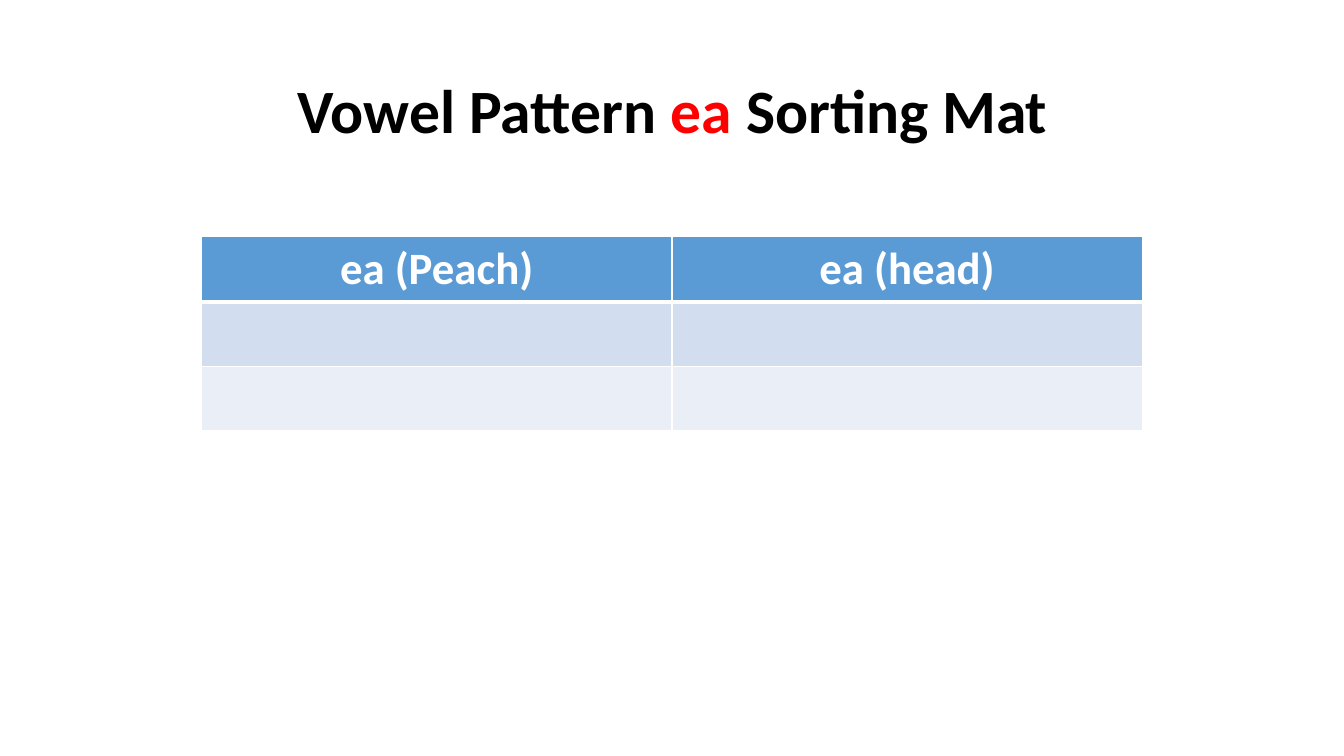
from lxml.etree import SubElement
from pptx import Presentation
from pptx.dml.color import RGBColor
from pptx.enum.text import MSO_ANCHOR, PP_ALIGN
from pptx.oxml.ns import qn
from pptx.util import Inches, Pt

COLORS = {
    "ink": "000000",
    "accent": "FF0000",
    "white": "FFFFFF",
    "head": "5B9BD5",
    "band": "D2DEEF",
    "light": "EAEFF7",
}


class Mat:
    """Hold the style and the slide of a sorting mat."""

    def __init__(self, deck, font="Calibri"):
        self.font = font
        self.slide = deck.slides.add_slide(deck.slide_layouts[5])

    def style(self, run, size, color):
        run.font.name = self.font
        run.font.size = Pt(size)
        run.font.bold = True
        run.font.color.rgb = RGBColor.from_string(COLORS[color])

    def title(self, parts, left, top, width, height):
        shape = self.slide.shapes.title
        shape.left, shape.top = Inches(left), Inches(top)
        shape.width, shape.height = Inches(width), Inches(height)
        shape.text_frame.vertical_anchor = MSO_ANCHOR.MIDDLE
        para = shape.text_frame.paragraphs[0]
        para.alignment = PP_ALIGN.CENTER
        para.line_spacing = 0.9
        for text, color in parts:
            run = para.add_run()
            run.text = text
            self.style(run, 44, color)

    def border(self, cell, sides):
        props = cell._tc.get_or_add_tcPr()
        for side, points in sides.items():
            line = SubElement(props, qn(f"a:ln{side}"), w=str(Pt(points)))
            fill = SubElement(line, qn("a:solidFill"))
            SubElement(fill, qn("a:srgbClr"), val=COLORS["white"])

    def table(self, heads, fills, left, top, width, height):
        frame = self.slide.shapes.add_table(
            len(fills), len(heads), Inches(left), Inches(top),
            Inches(width), Inches(height))
        grid = frame.table
        for row, color in enumerate(fills):
            for col in range(len(heads)):
                cell = grid.cell(row, col)
                self.border(cell, {"L": 1, "R": 1,
                                   "T": 3 if row == 1 else 1,
                                   "B": 3 if row == 0 else 1})
                cell.fill.solid()
                cell.fill.fore_color.rgb = RGBColor.from_string(COLORS[color])
        for col, text in enumerate(heads):
            para = grid.cell(0, col).text_frame.paragraphs[0]
            para.text = text
            para.alignment = PP_ALIGN.CENTER
            self.style(para.runs[0], 32, "white")


def main():
    deck = Presentation()
    deck.slide_width, deck.slide_height = Inches(13.33), Inches(7.5)
    mat = Mat(deck)
    mat.title([("Vowel Pattern ", "ink"), ("ea", "accent"),
               (" Sorting Mat", "ink")], 0.92, 0.4, 11.5, 1.45)
    mat.table(["ea (Peach)", "ea (head)"], ["head", "band", "light"],
              2, 2.35, 9.33, 1.92)
    deck.save("out.pptx")


if __name__ == "__main__":
    main()
